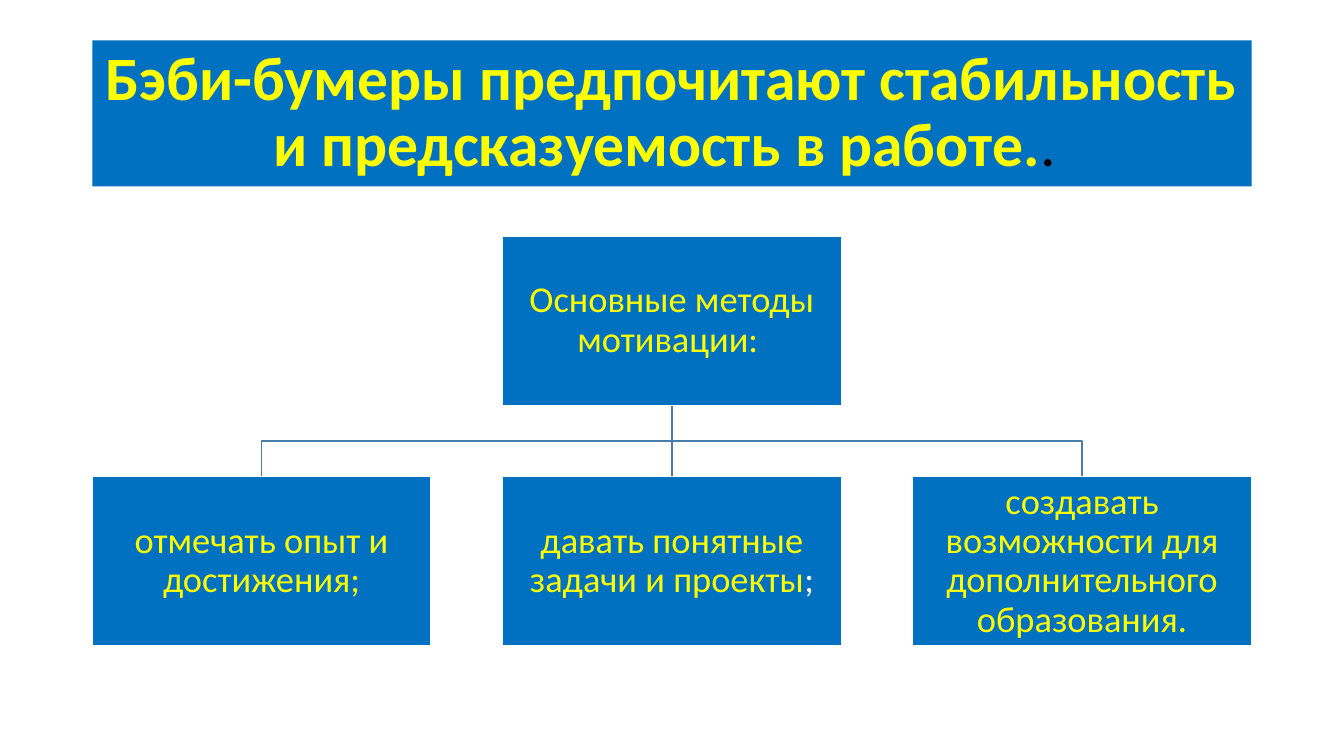
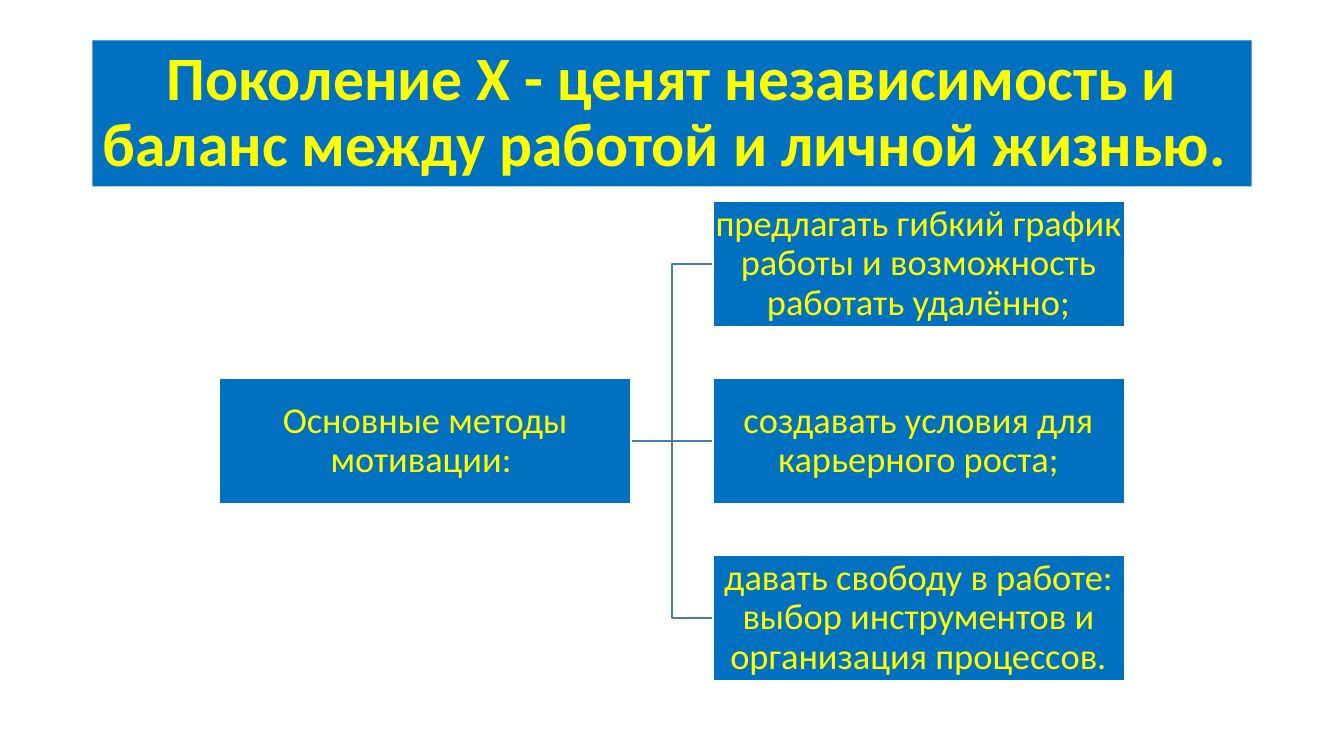
from dataclasses import dataclass

from lxml import etree
from pptx import Presentation
from pptx.dml.color import RGBColor
from pptx.enum.shapes import MSO_CONNECTOR, MSO_SHAPE
from pptx.enum.text import MSO_ANCHOR, MSO_AUTO_SIZE, PP_ALIGN
from pptx.oxml.ns import qn
from pptx.shapes.autoshape import Shape
from pptx.slide import Slide
from pptx.util import Pt

RECTANGLE = MSO_SHAPE.RECTANGLE
STRAIGHT = MSO_CONNECTOR.STRAIGHT
MIDDLE = MSO_ANCHOR.MIDDLE
NO_AUTOFIT = MSO_AUTO_SIZE.NONE
CENTER = PP_ALIGN.CENTER

COLORS = {
    "panel": "0070C0",
    "text": "FFFF00",
    "branch": "497CAB",
    "white": "FFFFFF",
    "black": "000000",
}
FONT = "Calibri"
TITLE_ONLY_LAYOUT = 5
CENTER_X, CENTER_Y = 480, 315


@dataclass(frozen=True)
class Run:
    text: str
    color: str = "text"
    bold: bool = False


@dataclass(frozen=True)
class Box:
    left: float
    top: float
    width: float
    height: float

    @property
    def center_x(self) -> float:
        return self.left + self.width / 2

    @property
    def center_y(self) -> float:
        return self.top + self.height / 2


@dataclass(frozen=True)
class Node:
    box: Box
    runs: tuple[Run, ...]


@dataclass(frozen=True)
class Tree:
    title: tuple[Run, ...]
    root: Node
    children: tuple[Node, ...]
    grows_down: bool


TITLE_BOX = Box(66, 28.8, 828, 104.4)
ROOT_RUNS = (Run("Основные методы мотивации: "),)


def rgb(name: str) -> RGBColor:
    return RGBColor.from_string(COLORS[name])


def write_text(shape: Shape, runs: tuple[Run, ...], *, size: float,
               inset_x: float, inset_y: float) -> None:
    """Write one centred paragraph made of formatted runs."""
    frame = shape.text_frame
    frame.word_wrap = True
    frame.auto_size = NO_AUTOFIT
    frame.vertical_anchor = MIDDLE
    frame.margin_left = frame.margin_right = Pt(inset_x)
    frame.margin_top = frame.margin_bottom = Pt(inset_y)
    paragraph = frame.paragraphs[0]
    paragraph.alignment = CENTER
    paragraph.line_spacing = 0.9
    for item in runs:
        run = paragraph.add_run()
        run.text = item.text
        run.font.name = FONT
        run.font.size = Pt(size)
        run.font.bold = item.bold
        run.font.color.rgb = rgb(item.color)


def fill_panel(shape: Shape) -> None:
    shape.fill.solid()
    shape.fill.fore_color.rgb = rgb("panel")


def add_title(slide: Slide, runs: tuple[Run, ...]) -> None:
    title = slide.shapes.title
    title.left, title.top = Pt(TITLE_BOX.left), Pt(TITLE_BOX.top)
    title.width, title.height = Pt(TITLE_BOX.width), Pt(TITLE_BOX.height)
    fill_panel(title)
    write_text(title, runs, size=44, inset_x=7.2, inset_y=3.6)


def add_node(slide: Slide, node: Node) -> None:
    box = node.box
    shape = slide.shapes.add_shape(
        RECTANGLE, Pt(box.left), Pt(box.top), Pt(box.width), Pt(box.height))
    shape.shadow.inherit = False
    fill_panel(shape)
    shape.line.color.rgb = rgb("white")
    shape.line.width = Pt(1)
    write_text(shape, node.runs, size=26, inset_x=1.3, inset_y=1.3)


def branch_points(root: Box, child: Box, grows_down: bool) -> list[tuple[float, float]]:
    """Return the corners of a branch that bends halfway between two boxes."""
    if grows_down:
        start = (root.center_x, root.top + root.height)
        end = (child.center_x, child.top)
        middle = (start[1] + end[1]) / 2
        return [start, (start[0], middle), (end[0], middle), end]
    start = (root.left + root.width, root.center_y)
    end = (child.left, child.center_y)
    middle = (start[0] + end[0]) / 2
    return [start, (middle, start[1]), (middle, end[1]), end]


def add_branch(slide: Slide, root: Box, child: Box, grows_down: bool) -> None:
    points = [(Pt(x), Pt(y)) for x, y in branch_points(root, child, grows_down)]
    start, end = points[0], points[-1]
    if start[0] == end[0] or start[1] == end[1]:
        branch = slide.shapes.add_connector(STRAIGHT, *start, *end)
        etree.SubElement(branch._element.spPr, qn("a:effectLst"))
    else:
        builder = slide.shapes.build_freeform(*start)
        builder.add_line_segments(points[1:], close=False)
        branch = builder.convert_to_shape()
        branch.fill.background()
        branch.shadow.inherit = False
    branch.line.color.rgb = rgb("branch")
    branch.line.width = Pt(1)


def add_tree_slide(presentation: Presentation, tree: Tree) -> None:
    slide = presentation.slides.add_slide(
        presentation.slide_layouts[TITLE_ONLY_LAYOUT])
    add_title(slide, tree.title)
    # Branches lie behind the boxes
    for child in tree.children:
        add_branch(slide, tree.root.box, child.box, tree.grows_down)
    for node in (tree.root, *tree.children):
        add_node(slide, node)


def boomers_tree() -> Tree:
    width, height, pitch = 242, 121, 293
    texts = (
        (Run("отмечать опыт и достижения;"),),
        (Run("давать понятные задачи и проекты"), Run(";", "white")),
        (Run("создавать возможности для дополнительного образования."),),
    )
    left = CENTER_X - width / 2
    children = tuple(
        Node(Box(left + (index - 1) * pitch, 340.5, width, height), runs)
        for index, runs in enumerate(texts))
    return Tree(
        title=(Run("Бэби-бумеры предпочитают стабильность и "
                   "предсказуемость в работе.", bold=True), Run(". ", "black")),
        root=Node(Box(left, 168.5, width, height), ROOT_RUNS),
        children=children,
        grows_down=True)


def generation_x_tree() -> Tree:
    width, height, pitch, gap = 293.8, 89.4, 126.4, 58.6
    texts = (
        "предлагать гибкий график работы и возможность работать удалённо;",
        "создавать условия для карьерного роста;",
        "давать свободу в работе: выбор инструментов и организация процессов.",
    )
    top = CENTER_Y - height / 2
    children = tuple(
        Node(Box(CENTER_X + gap / 2, top + (index - 1) * pitch, width, height),
             (Run(text),))
        for index, text in enumerate(texts))
    return Tree(
        title=(Run("Поколение X - ценят независимость и баланс между "
                   "работой и личной жизнью. ", bold=True),),
        root=Node(Box(CENTER_X - gap / 2 - width, top, width, height), ROOT_RUNS),
        children=children,
        grows_down=False)


def main() -> None:
    presentation = Presentation()
    presentation.slide_width, presentation.slide_height = Pt(960), Pt(540)
    for tree in (boomers_tree(), generation_x_tree()):
        add_tree_slide(presentation, tree)
    presentation.save("out.pptx")


if __name__ == "__main__":
    main()
